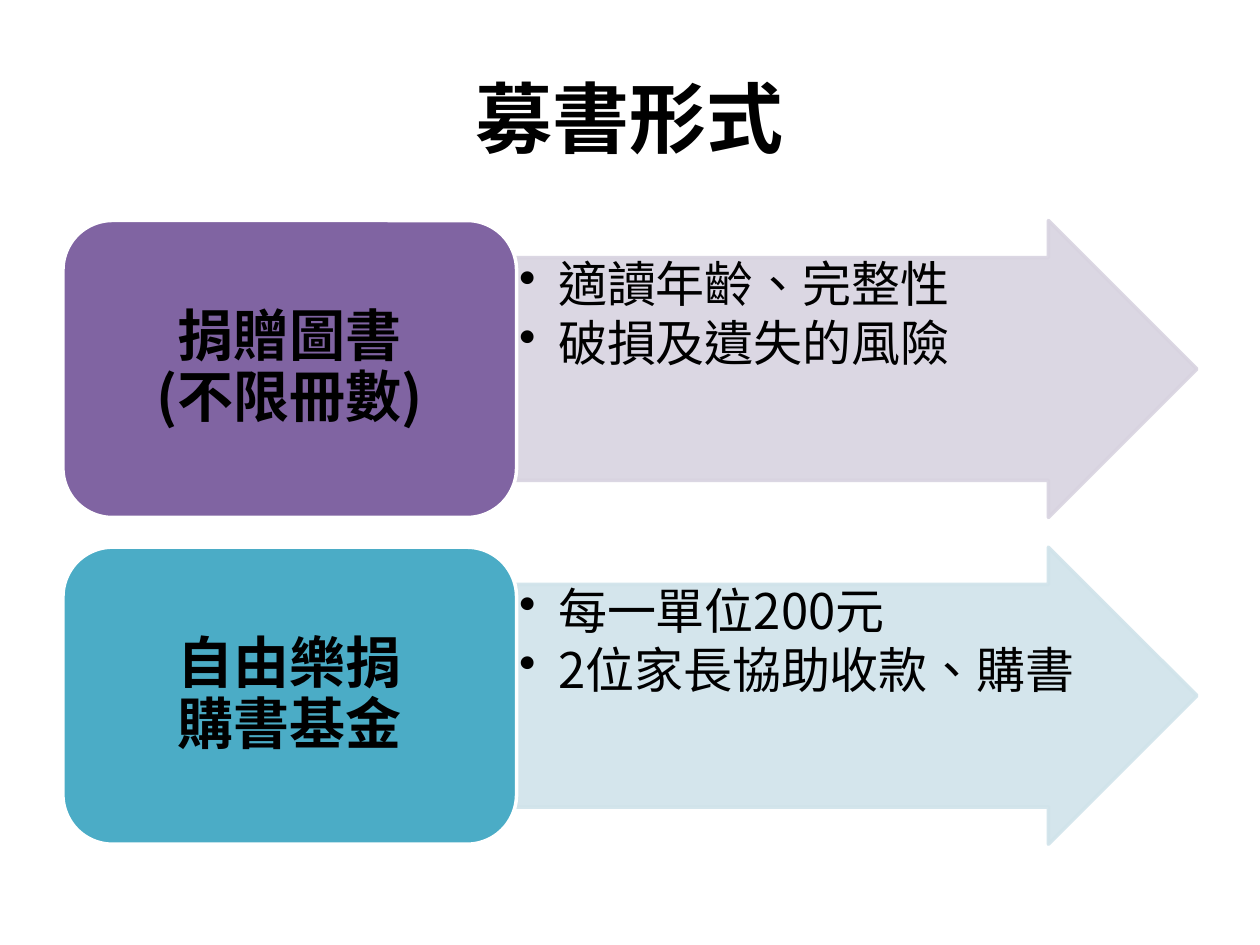
from dataclasses import dataclass

from pptx import Presentation
from pptx.dml.color import RGBColor
from pptx.enum.shapes import MSO_SHAPE
from pptx.enum.text import MSO_ANCHOR, PP_ALIGN
from pptx.oxml.ns import qn
from pptx.util import Inches, Pt
from lxml.etree import SubElement


@dataclass(frozen=True)
class Theme:
    font: str = "Noto Sans CJK SC"
    language: str = "zh-TW"
    text: str = "000000"
    edge: str = "FFFFFF"
    title: int = 44
    label: int = 32
    body: int = 28
    line: int = 2
    spacing: float = 0.9
    bullet_gap: float = 3.5


THEME = Theme()
TITLE = "募書形式"
# label lines, label colour, arrow colour, bullets
ROWS = [
    (["捐贈圖書", "(不限冊數)"], "8064A2", "D8D3E0",
     ["適讀年齡、完整性", "破損及遺失的風險"]),
    (["自由樂捐", "購書基金"], "4BACC6", "D0E3EA",
     ["每一單位200元", "2位家長協助收款、購書"]),
]


def add_run(p, text, size, bold=False):
    r = p.add_run()
    r.text = text
    r.font.size = Pt(size)
    r.font.bold = bold
    r.font.name = THEME.font
    r.font.color.rgb = RGBColor.from_string(THEME.text)
    rPr = r._r.get_or_add_rPr()
    rPr.set("lang", THEME.language)
    SubElement(rPr, qn("a:ea"), typeface=THEME.font)


def add_text_box(slide, box, anchor, inset_x, inset_y):
    tf = slide.shapes.add_textbox(*map(Inches, box)).text_frame
    tf.word_wrap = True
    tf.vertical_anchor = anchor
    tf.margin_left = tf.margin_right = Inches(inset_x)
    tf.margin_top = tf.margin_bottom = Inches(inset_y)
    return tf


def add_filled_shape(slide, kind, box, fill, line, opacity=100):
    sp = slide.shapes.add_shape(kind, *map(Inches, box))
    sp.shadow.inherit = False
    sp.fill.solid()
    sp.fill.fore_color.rgb = RGBColor.from_string(fill)
    sp.line.color.rgb = RGBColor.from_string(line)
    sp.line.width = Pt(THEME.line)
    if opacity < 100:
        for color in sp._element.spPr.iter(qn("a:srgbClr")):
            SubElement(color, qn("a:alpha"), val=str(opacity * 1000))
    return sp


def add_title(slide, box):
    tf = add_text_box(slide, box, MSO_ANCHOR.MIDDLE, 0.1, 0.05)
    p = tf.paragraphs[0]
    p.alignment = PP_ALIGN.CENTER
    add_run(p, TITLE, THEME.title, bold=True)


def add_arrow(slide, box, color, bullets):
    """Place an arrow and a bullet list inside its shaft."""
    shaft, head = 0.75, 0.5
    x, y, w, h = box
    sp = add_filled_shape(slide, MSO_SHAPE.RIGHT_ARROW, box, color, color, 90)
    sp.adjustments[0], sp.adjustments[1] = shaft, head
    inner = (x, y + h * (1 - shaft) / 2, w - h * head * shaft, h * shaft)
    tf = add_text_box(slide, inner, MSO_ANCHOR.TOP, 0.02, 0.02)
    for i, text in enumerate(bullets):
        p = tf.add_paragraph() if i else tf.paragraphs[0]
        p.line_spacing = THEME.spacing
        p.space_after = Pt(THEME.bullet_gap)
        pPr = p._p.get_or_add_pPr()
        pPr.set("marL", str(Inches(0.31)))
        pPr.set("indent", str(-Inches(0.31)))
        SubElement(pPr, qn("a:buChar"), char="•")
        add_run(p, text, THEME.body)


def add_label(slide, box, color, lines):
    x, y, w, h = box
    pad = h * 0.05
    add_filled_shape(slide, MSO_SHAPE.ROUNDED_RECTANGLE, box, color, THEME.edge)
    inner = (x + pad, y + pad, w - 2 * pad, h - 2 * pad)
    tf = add_text_box(slide, inner, MSO_ANCHOR.MIDDLE, 0.13, 0.07)
    p = tf.paragraphs[0]
    p.alignment = PP_ALIGN.CENTER
    p.line_spacing = THEME.spacing
    for i, line in enumerate(lines):
        if i:
            p.add_line_break()
        add_run(p, line, THEME.label, bold=True)


def add_rows(slide, box):
    """Stack the rows with gaps of a tenth of a row; labels take 40 % of the width."""
    x, y, w, h = box
    gap, label_share = 0.1, 0.4
    row_h = h / (len(ROWS) + gap * (len(ROWS) - 1))
    label_w = w * label_share
    for i, (lines, label_color, arrow_color, bullets) in enumerate(ROWS):
        top = y + i * row_h * (1 + gap)
        add_arrow(slide, (x + label_w, top, w - label_w, row_h), arrow_color, bullets)
        add_label(slide, (x, top, label_w, row_h), label_color, lines)


def main():
    prs = Presentation()
    prs.slide_width, prs.slide_height = Inches(10), Inches(7.5)
    slide = prs.slides.add_slide(prs.slide_layouts[6])
    add_title(slide, (0.5, 0.3, 9, 1.25))
    add_rows(slide, (0.5, 1.75, 9, 4.95))
    prs.save("out.pptx")


if __name__ == "__main__":
    main()
